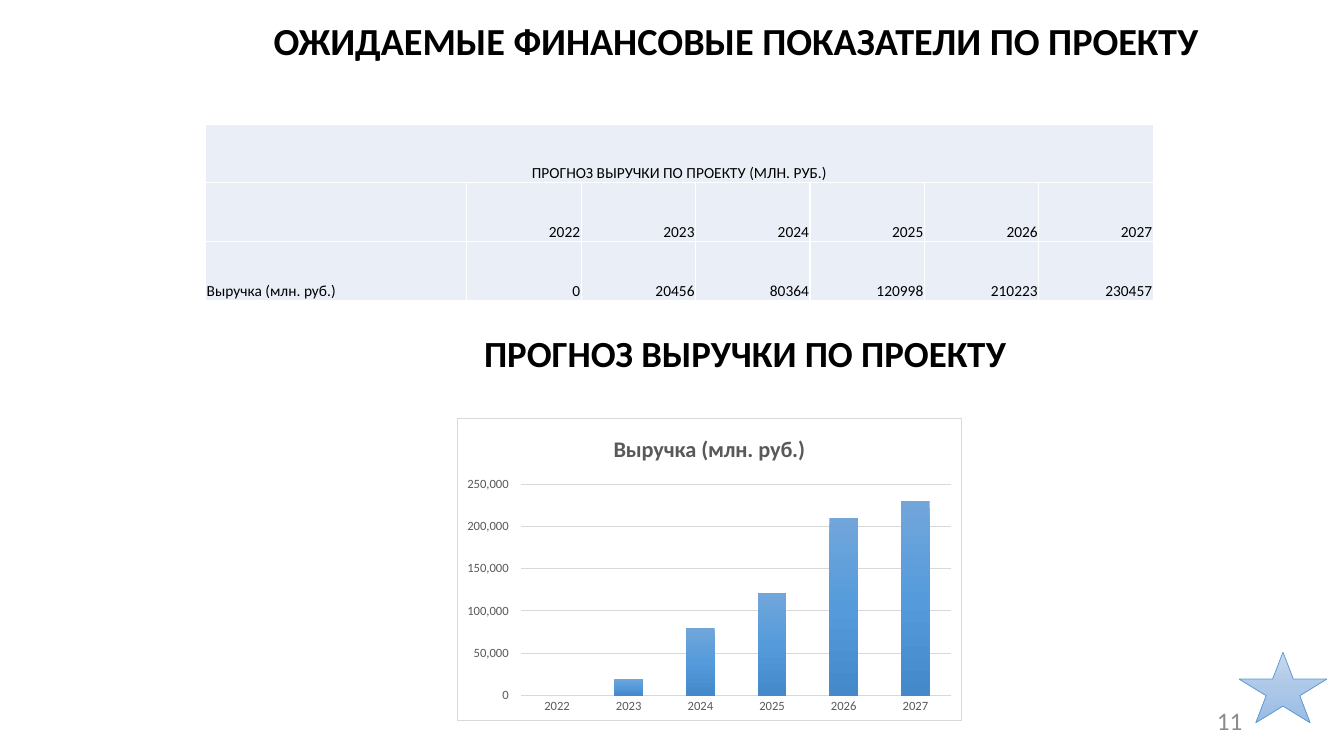
from copy import deepcopy

from lxml import etree
from pptx import Presentation
from pptx.chart.data import CategoryChartData
from pptx.dml.color import RGBColor
from pptx.enum import chart as ch, shapes, text
from pptx.oxml import parse_xml
from pptx.oxml.ns import nsdecls, qn
from pptx.util import Inches, Pt

TITLE = "ОЖИДАЕМЫЕ ФИНАНСОВЫЕ ПОКАЗАТЕЛИ ПО ПРОЕКТУ"
CHART_HEADING = "ПРОГНОЗ ВЫРУЧКИ ПО ПРОЕКТУ"
TABLE_HEADING = "ПРОГНОЗ ВЫРУЧКИ ПО ПРОЕКТУ (МЛН. РУБ.)"
REVENUE_LABEL = "Выручка (млн. руб.)"
REVENUE = {"2022": 0, "2023": 20456, "2024": 80364,
           "2025": 120998, "2026": 210223, "2027": 230457}
PAGE = "11"

FONT = "Calibri"
COLORS = {"text": "000000", "page": "8C8C8C", "cell": "EAEFF7", "white": "FFFFFF",
          "chart_text": "595959", "grid": "D9D9D9", "star_line": "5B9BD5"}
STAR_STOPS = ["C7D9EE", "ADC7E7", "9ABDE5"]
BAR_STOPS = ["71A6DB", "559BDB", "448ACA"]
LABEL_WIDTH, TABLE_WIDTH, TABLE_HEIGHT = 2.59, 9.4, 1.75


ALIGN = text.PP_ALIGN


def rgb(name):
    return RGBColor.from_string(COLORS[name])


def box(left, top, width, height):
    return [Inches(n) for n in (left, top, width, height)]


def style_font(font, size, color, bold=False):
    font.name, font.size, font.bold = FONT, Pt(size), bold
    font.color.rgb = rgb(color)


def write(holder, words, size, color, align, bold=False):
    frame = holder.text_frame
    frame.text = words
    frame.word_wrap = True
    frame.paragraphs[0].alignment = align
    style_font(frame.paragraphs[0].runs[0].font, size, color, bold)


def fill_downwards(fill, element, colors):
    """Fill with evenly spaced gradient stops running from top to bottom."""
    fill.gradient()
    fill.gradient_angle = 270
    stops = element.find(".//" + qn("a:gsLst"))
    stops.insert(1, deepcopy(stops[0]))
    for i, (stop, color) in enumerate(zip(stops, colors)):
        stop.set("pos", str(100000 * i // (len(colors) - 1)))
        for child in list(stop):
            stop.remove(child)
        etree.SubElement(stop, qn("a:srgbClr")).set("val", color)


def border_cell(cell):
    properties = cell._tc.get_or_add_tcPr()
    for i, side in enumerate(("lnL", "lnR", "lnT", "lnB")):
        properties.insert(i, parse_xml(
            f'<a:{side} {nsdecls("a")} w="12700"><a:solidFill>'
            f'<a:srgbClr val="{COLORS["white"]}"/></a:solidFill></a:{side}>'))


def add_revenue_table(slide):
    rows = [[TABLE_HEADING] + [""] * len(REVENUE),
            ["", *REVENUE],
            [REVENUE_LABEL, *map(str, REVENUE.values())]]
    table = slide.shapes.add_table(
        len(rows), len(rows[0]), *box(2.04, 1.23, TABLE_WIDTH, TABLE_HEIGHT)).table
    table.first_row = table.horz_banding = False
    for i, column in enumerate(table.columns):
        column.width = Inches((TABLE_WIDTH - LABEL_WIDTH) / len(REVENUE) if i else LABEL_WIDTH)
    for r, row in enumerate(rows):
        for c, words in enumerate(row):
            cell = table.cell(r, c)
            cell.margin_left = cell.margin_right = cell.margin_top = Inches(0.01)
            cell.margin_bottom = 0
            cell.vertical_anchor = text.MSO_ANCHOR.BOTTOM
            cell.fill.solid()
            cell.fill.fore_color.rgb = rgb("cell")
            border_cell(cell)
            if words:
                align = ALIGN.CENTER if r == 0 else ALIGN.RIGHT if c else ALIGN.LEFT
                write(cell, words, 11, "text", align)
    table.cell(0, 0).merge(table.cell(0, len(REVENUE)))


def add_revenue_chart(slide):
    data = CategoryChartData()
    data.categories = list(REVENUE)
    data.add_series(REVENUE_LABEL, [round(amount, -3) for amount in REVENUE.values()])
    chart = slide.shapes.add_chart(
        ch.XL_CHART_TYPE.COLUMN_STACKED, *box(4.53, 4.15, 5.01, 3), data).chart
    style_font(chart.font, 10, "text")
    chart.has_legend = False
    chart.has_title = True
    write(chart.chart_title, REVENUE_LABEL, 16, "chart_text", ALIGN.CENTER, bold=True)
    chart.chart_title.include_in_layout = False

    for axis in (chart.category_axis, chart.value_axis):
        axis.major_tick_mark = axis.minor_tick_mark = ch.XL_TICK_MARK.NONE
        style_font(axis.tick_labels.font, 9, "chart_text")
    years, amounts = chart.category_axis, chart.value_axis
    years.format.line.color.rgb = rgb("grid")
    years.format.line.width = Pt(1)
    amounts.format.line.fill.background()
    amounts.minimum_scale, amounts.maximum_scale, amounts.major_unit = 0, 250000, 50000
    amounts.tick_labels.number_format = "#,##0\\ _₽"
    amounts.tick_labels.number_format_is_linked = False
    amounts.major_gridlines.format.line.color.rgb = rgb("grid")
    amounts.major_gridlines.format.line.width = Pt(0.75)

    plot = chart.plots[0]
    plot.gap_width, plot.overlap, plot.vary_by_categories = 150, 100, False
    bars = plot.series[0]
    fill_downwards(bars.format.fill, bars._element, BAR_STOPS)

    chart._chartSpace.find(qn("c:chart")).addnext(parse_xml(
        f'<c:spPr {nsdecls("c", "a")}><a:solidFill><a:srgbClr val="{COLORS["white"]}"/>'
        f'</a:solidFill><a:ln w="9525"><a:solidFill><a:srgbClr val="{COLORS["grid"]}"/>'
        '</a:solidFill></a:ln></c:spPr>'))


def main():
    deck = Presentation()
    deck.slide_width, deck.slide_height = Inches(13.33), Inches(7.5)
    slide = deck.slides.add_slide(deck.slide_layouts[5])

    title = slide.shapes.title
    title.left, title.top, title.width, title.height = box(1.82, 0.05, 10.96, 0.7)
    page = slide.shapes.add_textbox(*box(9.42, 6.95, 3, 0.4))
    heading = slide.shapes.add_textbox(*box(1.91, 3.22, 10.96, 0.55))
    write(title, TITLE, 27.3, "text", ALIGN.CENTER, bold=True)
    write(page, PAGE, 18, "page", ALIGN.RIGHT)
    write(heading, CHART_HEADING, 26.3, "text", ALIGN.CENTER, bold=True)
    for holder in (title, page, heading):
        holder.text_frame.vertical_anchor = text.MSO_ANCHOR.MIDDLE

    star = slide.shapes.add_shape(shapes.MSO_SHAPE.STAR_5_POINT, *box(12.29, 6.47, 0.87, 0.7))
    star.shadow.inherit = False
    fill_downwards(star.fill, star._element, STAR_STOPS)
    star.line.color.rgb = rgb("star_line")
    star.line.width = Pt(0.5)

    add_revenue_table(slide)
    add_revenue_chart(slide)
    deck.save("out.pptx")


if __name__ == "__main__":
    main()
